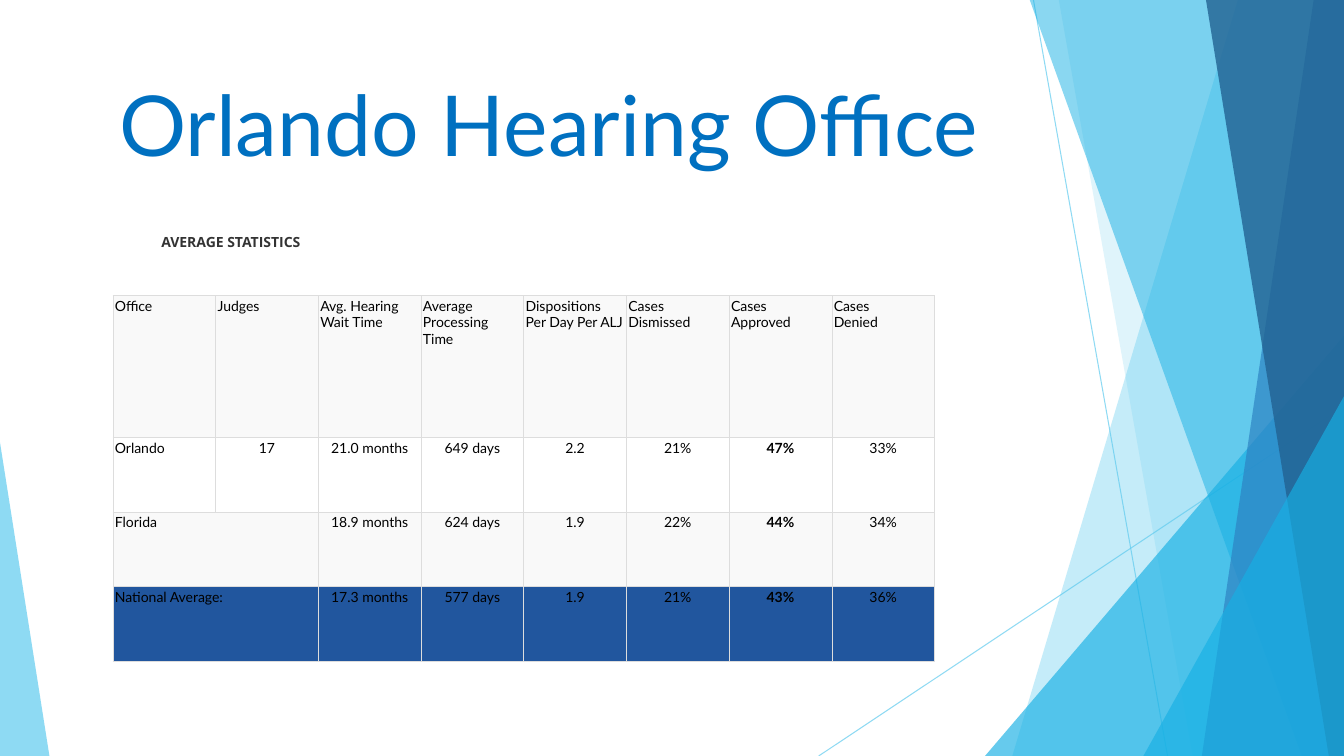
from copy import deepcopy

from lxml import etree
from pptx import Presentation
from pptx.dml.color import RGBColor
from pptx.enum import shapes, text
from pptx.oxml import ns
from pptx.util import Inches, Pt

SKY = RGBColor(0x5F, 0xCB, 0xEF)
CYAN = RGBColor(0x17, 0xB0, 0xE4)
BLUE = RGBColor(0x2E, 0x83, 0xC3)
NAVY = RGBColor(0x22, 0x62, 0x92)
TITLE_BLUE = RGBColor(0x00, 0x70, 0xC0)
AVERAGE_BLUE = RGBColor(0x21, 0x56, 0x9E)
PALE = RGBColor(0xF9, 0xF9, 0xF9)
WHITE = RGBColor(0xFF, 0xFF, 0xFF)
BLACK = RGBColor(0, 0, 0)
CHARCOAL = RGBColor(0x33, 0x33, 0x33)
BORDER = RGBColor(0xDD, 0xDD, 0xDD)

WIDTH, HEIGHT = 13.33, 7.5
TITLE = "Orlando Hearing Office"
CAPTION = "AVERAGE STATISTICS"

STATISTICS = [
    ["Office", "Judges", "Avg. Hearing\nWait Time", "Average\nProcessing Time",
     "Dispositions\nPer Day Per ALJ", "Cases\nDismissed", "Cases\nApproved", "Cases\nDenied"],
    ["Orlando", "17", "21.0 months", "649 days", "2.2", "21%", "47%", "33%"],
    ["Florida", None, "18.9 months", "624 days", "1.9", "22%", "44%", "34%"],
    ["National Average:", None, "17.3 months", "577 days", "1.9", "21%", "43%", "36%"],
]
ROW_HEIGHTS = [1.41, 0.74, 0.74, 0.74]
ROW_FILLS = [PALE, None, PALE, AVERAGE_BLUE]
TABLE_LEFT, TABLE_TOP, TABLE_WIDTH = 1.12, 2.93, 8.15
APPROVED = 6

RAYS = [((10.25, 0), (11.58, HEIGHT)), ((WIDTH, 4.03), (8.12, HEIGHT))]
# Each facet: kind, left edge at top (or left and top of a triangle), bottom left edge, colour, opacity
FACETS = [
    ("band", 12.28, 10.04, SKY, 36),
    ("band", 10.5, 11.83, SKY, 20),
    ("triangle", (9.77, 3.33, 3.56), 1, CYAN, 66),
    ("band", 10.21, 12.91, CYAN, 50),
    ("band", 13.03, 11.92, BLUE, 70),
    ("band", 11.96, 13.18, NAVY, 80),
    ("triangle", (11.34, 3.93, 1.99), 1, CYAN, 66),
    ("triangle", (0, 4.39, 0.49), 0, SKY, 70),
]


def write(frame, words, font="Lato", size=10, color=BLACK, bold=False,
          align=text.PP_ALIGN.LEFT, anchor=text.MSO_ANCHOR.TOP):
    frame.word_wrap = True
    frame.vertical_anchor = anchor
    paragraph = frame.paragraphs[0]
    paragraph.text = words
    paragraph.alignment = align
    for run in paragraph.runs:
        run.font.name, run.font.size, run.font.bold = font, Pt(size), bold
        run.font.color.rgb = color
    for line_break in paragraph._p.findall(ns.qn("a:br")):
        line_break.append(deepcopy(paragraph.runs[0]._r.rPr))


def set_opacity(element, percent):
    for color in element.iter(ns.qn("a:srgbClr")):
        etree.SubElement(color, ns.qn("a:alpha"), val=str(percent * 1000))


def paint(shape, color, opacity=100):
    shape.shadow.inherit = False
    shape.fill.solid()
    shape.fill.fore_color.rgb = color
    shape.line.fill.background()
    set_opacity(shape._element.spPr, opacity)


def draw_border(cell):
    properties = cell._tc.get_or_add_tcPr()
    for side in ("lnL", "lnR", "lnT", "lnB"):
        edge = etree.SubElement(properties, ns.qn("a:" + side), w=str(Pt(0.38)))
        solid = etree.SubElement(edge, ns.qn("a:solidFill"))
        etree.SubElement(solid, ns.qn("a:srgbClr"), val=str(BORDER))


def draw_backdrop(slide):
    for start, end in RAYS:
        ray = slide.shapes.add_connector(
            shapes.MSO_CONNECTOR.STRAIGHT, *(Inches(n) for n in start + end))
        ray.line.color.rgb = SKY
        ray.line.width = Pt(0.75)
        set_opacity(ray._element.spPr, 70)
        etree.SubElement(ray._element.spPr, ns.qn("a:effectLst"))

    for kind, edge, foot, color, opacity in FACETS:
        if kind == "band":
            outline = [(edge, -0.01), (WIDTH, -0.01), (WIDTH, HEIGHT), (foot, HEIGHT)]
            points = [(Inches(x), Inches(y)) for x, y in outline]
            builder = slide.shapes.build_freeform(*points[0])
            builder.add_line_segments(points[1:], close=True)
            facet = builder.convert_to_shape()
        else:
            left, top, width = edge
            facet = slide.shapes.add_shape(
                shapes.MSO_SHAPE.ISOSCELES_TRIANGLE, Inches(left), Inches(top),
                Inches(width), Inches(HEIGHT - top))
            facet.adjustments[0] = foot
        paint(facet, color, opacity)


def draw_statistics(slide):
    columns = len(STATISTICS[0])
    statistics = slide.shapes.add_table(
        len(STATISTICS), columns, Inches(TABLE_LEFT), Inches(TABLE_TOP),
        Inches(TABLE_WIDTH), Inches(sum(ROW_HEIGHTS))).table
    statistics.first_row = statistics.horz_banding = False
    for column in statistics.columns:
        column.width = Inches(TABLE_WIDTH / columns)

    for r, (entries, height, fill) in enumerate(zip(STATISTICS, ROW_HEIGHTS, ROW_FILLS)):
        statistics.rows[r].height = Inches(height)
        for c, entry in enumerate(entries):
            cell = statistics.cell(r, c)
            draw_border(cell)
            if fill is None:
                cell.fill.background()
            else:
                cell.fill.solid()
                cell.fill.fore_color.rgb = fill
            cell.margin_left = cell.margin_right = Inches(0.02)
            cell.margin_top = cell.margin_bottom = Inches(0.02)
            if entry is None:
                statistics.cell(r, c - 1).merge(cell)
                continue
            centred = r > 0 and c > 0
            write(cell.text_frame, entry, bold=r > 0 and c == APPROVED,
                  align=text.PP_ALIGN.CENTER if centred else text.PP_ALIGN.LEFT)


def main():
    deck = Presentation()
    deck.slide_width, deck.slide_height = Inches(WIDTH), Inches(HEIGHT)
    slide = deck.slides.add_slide(deck.slide_layouts[6])
    draw_backdrop(slide)

    title = slide.shapes.add_textbox(Inches(0.74), Inches(0.67), Inches(9.4), Inches(1.44))
    write(title.text_frame, TITLE, size=60, color=TITLE_BLUE, align=text.PP_ALIGN.CENTER)

    draw_statistics(slide)

    caption = slide.shapes.add_shape(
        shapes.MSO_SHAPE.RECTANGLE, Inches(1.6), Inches(2.25), Inches(2.9), Inches(0.54))
    paint(caption, WHITE)
    frame = caption.text_frame
    frame.margin_left = frame.margin_right = frame.margin_bottom = 0
    frame.margin_top = Inches(0.07)
    write(frame, CAPTION, font="Open Sans", color=CHARCOAL, bold=True)

    deck.save("out.pptx")


if __name__ == "__main__":
    main()
